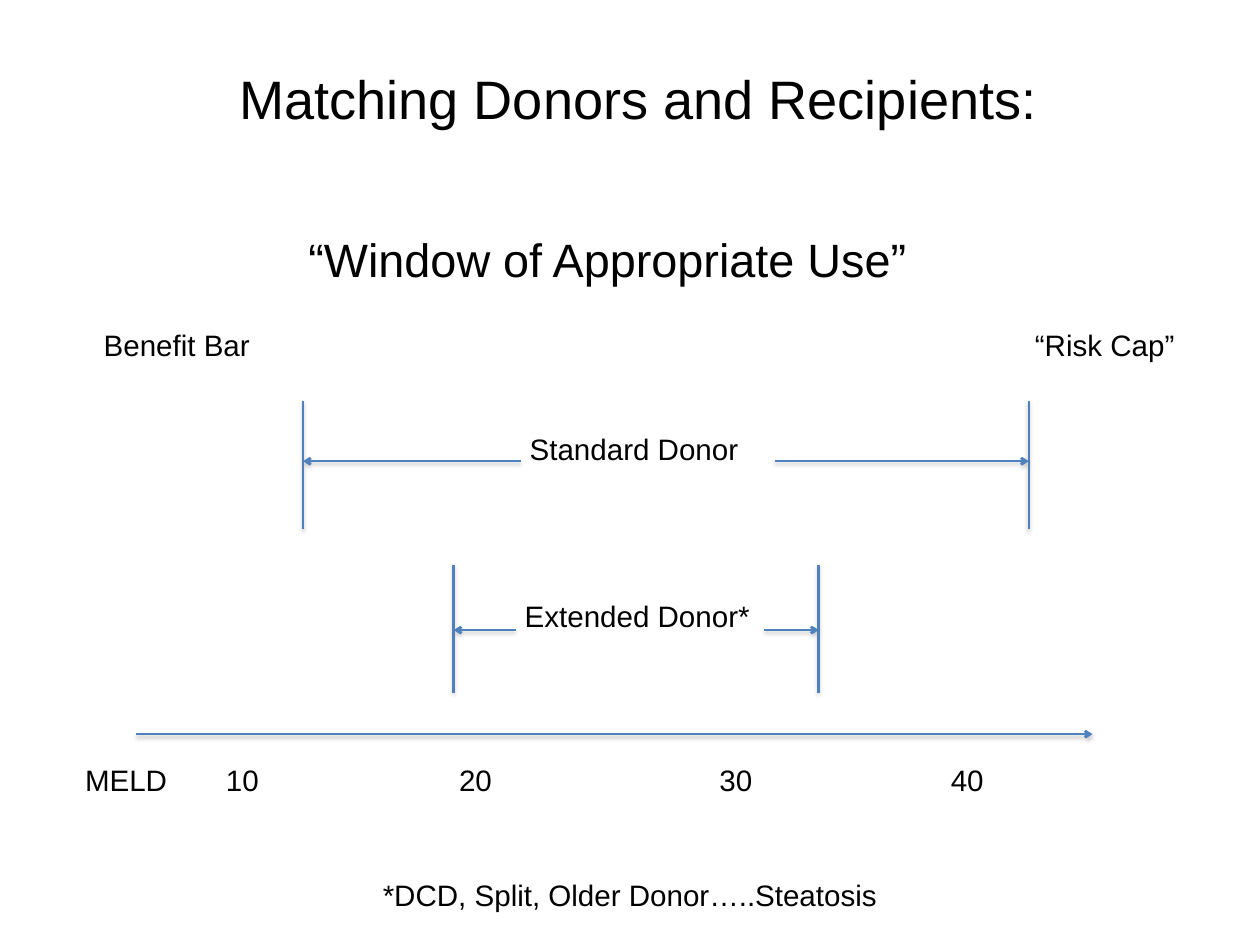
import pptx
import pptx.util
import pptx.dml.color
import pptx.enum.shapes
import pptx.enum.text
import pptx.oxml
import pptx.oxml.ns
from collections import namedtuple

BLACK = pptx.dml.color.RGBColor(0x00, 0x00, 0x00)
BLUE = pptx.dml.color.RGBColor(0x4F, 0x81, 0xBD)
FONT = "Arial"
BODY_SIZE = 24
LINE_HEIGHT = 4.59
INSET = pptx.util.Inches(0.06)

deck = pptx.Presentation()
deck.slide_width = pptx.util.Inches(14.22)
deck.slide_height = pptx.util.Inches(10.67)

# Boxes are given in percent of the slide's width and height
Box = namedtuple("Box", "left top width height")


def across(share):
    return round(deck.slide_width * share / 100)


def down(share):
    return round(deck.slide_height * share / 100)


def fill_text(shape, box, text, size):
    shape.left, shape.top = across(box.left), down(box.top)
    shape.width, shape.height = across(box.width), down(box.height)
    frame = shape.text_frame
    frame.text = text
    frame.word_wrap = False
    frame.auto_size = pptx.enum.text.MSO_AUTO_SIZE.SHAPE_TO_FIT_TEXT
    frame.vertical_anchor = pptx.enum.text.MSO_ANCHOR.TOP
    frame.margin_left = frame.margin_top = frame.margin_bottom = 0
    frame.margin_right = INSET
    para = frame.paragraphs[0]
    para.alignment = pptx.enum.text.PP_ALIGN.LEFT
    para._p.get_or_add_pPr().set("marL", str(INSET))
    para._p.get_or_add_pPr().set("indent", "0")
    font = para.runs[0].font
    font.name, font.size = FONT, pptx.util.Pt(size)
    font.color.rgb = BLACK


def add_label(page, box, text, size=BODY_SIZE):
    shape = page.shapes.add_textbox(0, 0, 0, 0)
    fill_text(shape, box, text, size)


def add_line(page, start, end, arrow=False):
    line = page.shapes.add_connector(
        pptx.enum.shapes.MSO_CONNECTOR.STRAIGHT,
        across(start[0]), down(start[1]), across(end[0]), down(end[1]))
    line.line.color.rgb = BLUE
    line.line.width = pptx.util.Pt(2)
    namespace = pptx.oxml.ns.nsdecls("a")
    if arrow:
        line.line._get_or_add_ln().append(
            pptx.oxml.parse_xml(f'<a:tailEnd {namespace} type="arrow"/>'))
    # Soft grey shadow below the line
    line._element.spPr.append(pptx.oxml.parse_xml(
        f'<a:effectLst {namespace}><a:outerShdw blurRad="38100" dist="25400" '
        'dir="5400000" rotWithShape="0"><a:srgbClr val="808080">'
        '<a:alpha val="38000"/></a:srgbClr></a:outerShdw></a:effectLst>'))


def add_heading(page, box):
    fill_text(page.shapes.title, box._replace(height=7.4),
              "Matching Donors and Recipients:", 44)
    subtitle = Box(box.left + 5.48, box.top + 17.52, 48.73, 6.47)
    add_label(page, subtitle, "“Window of Appropriate Use”", 38)


def add_limits(page, box):
    add_label(page, box._replace(width=12.94), "Benefit Bar")
    cap_width = 12.38
    add_label(page, box._replace(left=box.left + box.width - cap_width,
                                 width=cap_width), "“Risk Cap”")


def add_window(page, box, text, text_width, text_at, arrow_level, gap):
    """Two bars with arrows outward from a label; inner places are box shares."""
    right, bottom = box.left + box.width, box.top + box.height
    arrow_top = box.top + arrow_level * box.height
    for edge, share in zip((box.left, right), gap):
        add_line(page, (edge, box.top), (edge, bottom))
        add_line(page, (box.left + share * box.width, arrow_top),
                 (edge, arrow_top), arrow=True)
    label = Box(box.left + text_at[0] * box.width,
                box.top + text_at[1] * box.height, text_width, LINE_HEIGHT)
    add_label(page, label, text)


def add_score_axis(page, box):
    add_line(page, (box.left + 4.5, box.top),
             (box.left + box.width, box.top), arrow=True)
    ticks = [("MELD", 0, 7.81), ("10", 11.18, 3.94), ("20", 29.68, 3.94),
             ("30", 50.35, 3.94), ("40", 68.71, 3.94)]
    for text, offset, width in ticks:
        add_label(page, Box(box.left + offset, box.top + 2.91, width,
                            LINE_HEIGHT), text)


def build_page():
    page = deck.slides.add_slide(deck.slide_layouts[5])
    add_heading(page, Box(18.57, 6.94, 64.63, 24))
    add_limits(page, Box(7.81, 34.58, 86.29, LINE_HEIGHT))
    # Donor windows
    add_window(page, Box(24.05, 42.46, 57.6, 13.5), "Standard Donor", 17.86,
               text_at=(0.305, 0.23), arrow_level=0.47, gap=(0.3, 0.65))
    add_window(page, Box(36.01, 59.79, 28.97, 13.5), "Extended Donor*", 19.2,
               text_at=(0.18, 0.26), arrow_level=0.51, gap=(0.17, 0.85))
    add_score_axis(page, Box(6.33, 77.69, 80.38, 7.5))
    # Footnote
    add_label(page, Box(29.96, 92.78, 40.51, LINE_HEIGHT),
              "*DCD, Split, Older Donor…..Steatosis")


if __name__ == "__main__":
    build_page()
    deck.save("out.pptx")
